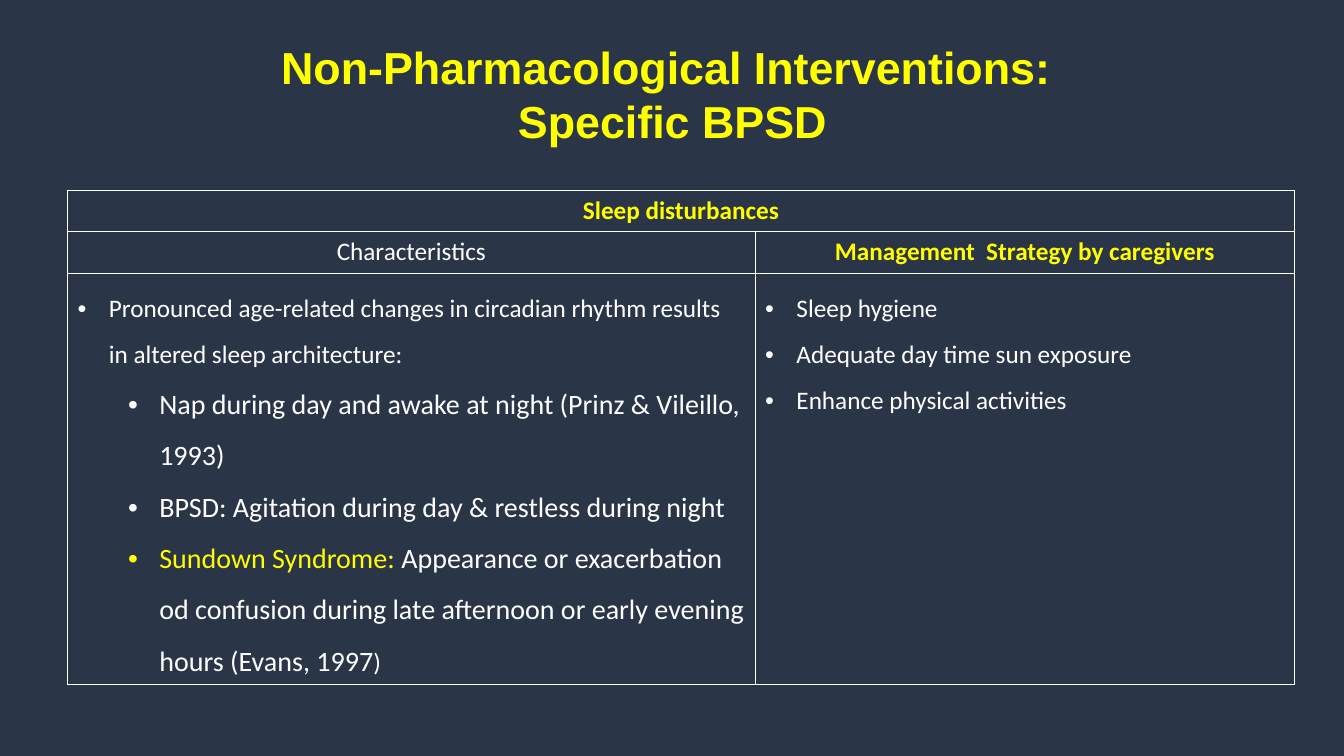
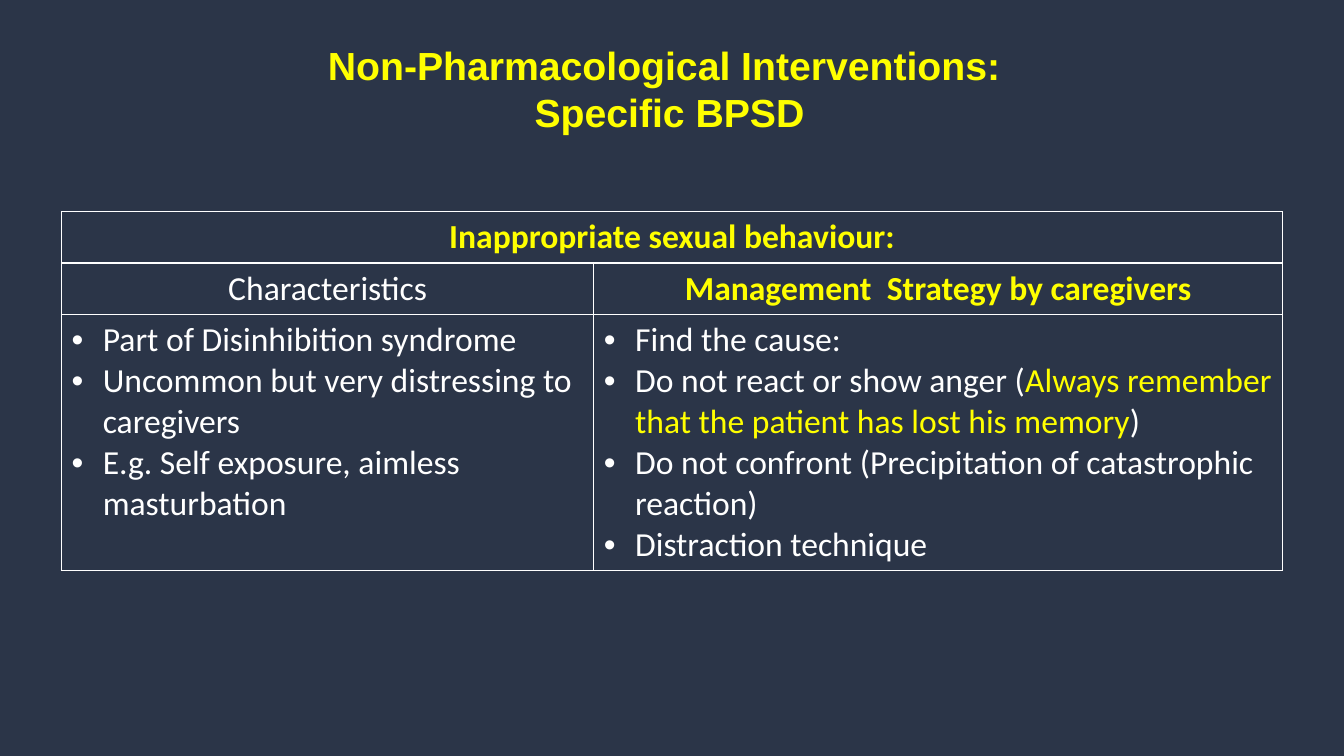
"""Builds two slides on non-pharmacological interventions for specific BPSD."""
import pptx
import pptx.dml.color
import pptx.enum.text
import pptx.oxml
import pptx.oxml.ns
import pptx.util

Inches = pptx.util.Inches
Pt = pptx.util.Pt
COLORS = {"background": "2B3548", "accent": "FFFF00", "text": "FFFFFF"}
CENTER = pptx.enum.text.PP_ALIGN.CENTER
TITLE = ["Non-Pharmacological Interventions: ", "Specific BPSD"]
HEADINGS = [("Characteristics", "text"), ("Management  Strategy by caregivers", "accent")]

TOPICS = [
    {
        "title_box": (0.67, 0.3, 12, 1.25), "title_size": 32,
        "heading": "Sleep disturbances", "size": 18, "spacing": 1.5,
        "origin": (0.67, 1.89), "widths": (6.82, 5.35), "heights": (0.41, 0.41, 4.08),
        "columns": [
            [
                (0, [("Pronounced age-related changes in circadian rhythm results "
                      "in altered sleep architecture:", "text", 18)]),
                (1, [("Nap during day and awake at night (Prinz & Vileillo, 1993)", "text", 20)]),
                (1, [("BPSD: Agitation during day & restless during night", "text", 20)]),
                (1, [("Sundown Syndrome: ", "accent", 20),
                     ("Appearance or exacerbation od confusion during late afternoon "
                      "or early evening hours (Evans, 1997", "text", 20),
                     (")", "text", 18)]),
            ],
            [
                (0, [("Sleep hygiene", "text", 18)]),
                (0, [("Adequate day time sun exposure", "text", 18)]),
                (0, [("Enhance physical activities", "text", 18)]),
            ],
        ],
    },
    {
        "title_box": (-0.06, 0.25, 13.4, 1.25), "title_size": 28,
        "heading": "Inappropriate sexual behaviour:", "size": 24, "spacing": 1.0,
        "origin": (0.61, 2.1), "widths": (5.28, 6.83), "heights": (0.51, 0.51, 2.54),
        "columns": [
            [
                (0, [("Part of Disinhibition syndrome", "text", 24)]),
                (0, [("Uncommon but very distressing to caregivers", "text", 24)]),
                (0, [("E.g. Self exposure, aimless masturbation", "text", 24)]),
            ],
            [
                (0, [("Find the cause:", "text", 24)]),
                (0, [("Do not react or show anger (", "text", 24),
                     ("Always remember that the patient has lost his memory", "accent", 24),
                     (")", "text", 24)]),
                (0, [("Do not confront (Precipitation of catastrophic reaction)", "text", 24)]),
                (0, [("Distraction technique", "text", 24)]),
            ],
        ],
    },
]


def add_run(paragraph, text, color, size, bold=False, font="Calibri"):
    run = paragraph.add_run()
    run.text = text
    run.font.name = font
    run.font.size = Pt(size)
    run.font.bold = bold
    run.font.color.rgb = pptx.dml.color.RGBColor.from_string(COLORS[color])


def style_cell(cell):
    cell.fill.background()
    properties = cell._tc.get_or_add_tcPr()
    for position, side in enumerate(("lnL", "lnR", "lnT", "lnB")):
        properties.insert(position, pptx.oxml.parse_xml(
            f'<a:{side} {pptx.oxml.ns.nsdecls("a")} w="12700"><a:solidFill>'
            f'<a:srgbClr val="{COLORS["text"]}"/></a:solidFill></a:{side}>'))


prs = pptx.Presentation()
prs.slide_width = Inches(13.33)
prs.slide_height = Inches(7.5)
backdrop = prs.slide_master.background.fill
backdrop.solid()
backdrop.fore_color.rgb = pptx.dml.color.RGBColor.from_string(COLORS["background"])

for topic in TOPICS:
    slide = prs.slides.add_slide(prs.slide_layouts[6])

    title = slide.shapes.add_textbox(*map(Inches, topic["title_box"])).text_frame
    title.word_wrap = True
    title.vertical_anchor = pptx.enum.text.MSO_ANCHOR.MIDDLE
    title_line = title.paragraphs[0]
    title_line.alignment = CENTER
    add_run(title_line, TITLE[0], "accent", topic["title_size"], True, "Arial")
    title_line.add_line_break()
    add_run(title_line, TITLE[1], "accent", topic["title_size"], True, "Arial")

    widths, heights = topic["widths"], topic["heights"]
    left, top = topic["origin"]
    table = slide.shapes.add_table(
        3, 2, Inches(left), Inches(top), Inches(sum(widths)), Inches(sum(heights))).table
    table.first_row = False
    table.horz_banding = False
    for column, width in zip(table.columns, widths):
        column.width = Inches(width)
    for row, height in zip(table.rows, heights):
        row.height = Inches(height)
    for cell in table.iter_cells():
        style_cell(cell)

    table.cell(0, 0).merge(table.cell(0, 1))
    topic_line = table.cell(0, 0).text_frame.paragraphs[0]
    topic_line.alignment = CENTER
    add_run(topic_line, topic["heading"], "accent", topic["size"], True)

    for index, (heading, color) in enumerate(HEADINGS):
        heading_line = table.cell(1, index).text_frame.paragraphs[0]
        heading_line.alignment = CENTER
        add_run(heading_line, heading, color, topic["size"], color == "accent")

        body = table.cell(2, index).text_frame
        for number, (level, runs) in enumerate(topic["columns"][index]):
            point = body.add_paragraph() if number else body.paragraphs[0]
            point.level = level
            properties = point._p.get_or_add_pPr()
            properties.set("marL", str(Inches(0.31 + 0.5 * level)))
            properties.set("indent", str(Inches(-0.31)))
            for bullet in ('buFont {} typeface="Arial"', 'buChar {} char="•"'):
                properties.append(pptx.oxml.parse_xml(
                    f'<a:{bullet.format(pptx.oxml.ns.nsdecls("a"))}/>'))
            point.line_spacing = topic["spacing"]
            for text, run_color, size in runs:
                add_run(point, text, run_color, size)

prs.save("out.pptx")
